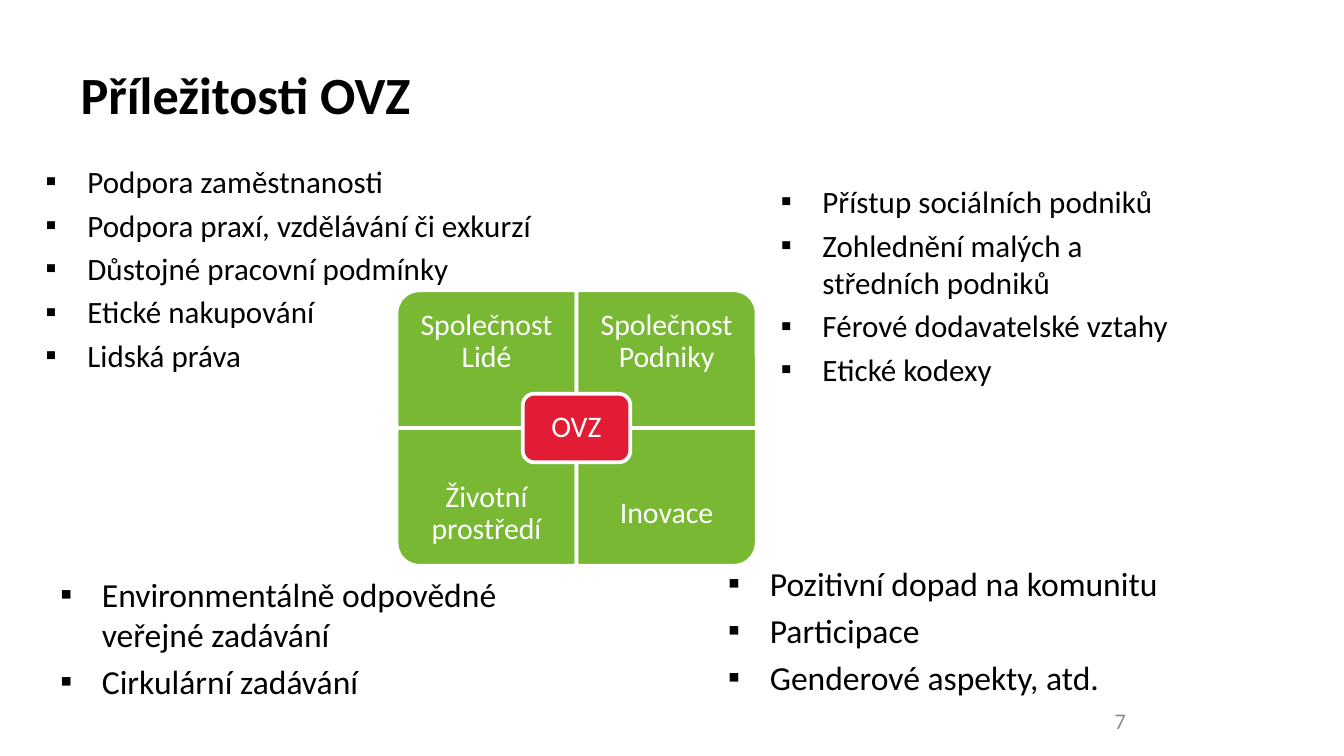
from dataclasses import dataclass
from typing import NamedTuple

from lxml.etree import SubElement
from pptx import Presentation
from pptx.dml.color import RGBColor
from pptx.enum.shapes import MSO_SHAPE as Shape
from pptx.enum.text import MSO_ANCHOR as Anchor, MSO_AUTO_SIZE as AutoSize, PP_ALIGN as Align
from pptx.oxml.ns import qn
from pptx.util import Inches, Pt

WIDTH = 10
HEIGHT = WIDTH * 9 / 16
COLS = 100
ROWS = COLS * 9 / 16


@dataclass(frozen=True)
class Theme:
    font: str = "Calibri"
    ink: str = "000000"
    white: str = "FFFFFF"
    green: str = "79B833"
    red: str = "E21C35"
    grey: str = "8C8C8C"
    title: float = 28
    upper: float = 16.65
    lower: float = 18
    label: float = 16
    number: float = 12
    line: float = 2
    indent: float = 0.31


class Box(NamedTuple):
    col: float
    row: float
    cols: float
    rows: float

    def emu(self) -> tuple:
        x, y = WIDTH / COLS, HEIGHT / ROWS
        return (Inches(self.col * x), Inches(self.row * y),
                Inches(self.cols * x), Inches(self.rows * y))


class BulletList(NamedTuple):
    box: Box
    size: float
    items: list[str]


class Quadrant(NamedTuple):
    text: str
    col: int
    row: int
    rotation: int


T = Theme()
QUAD = Box(29.5, 21.6, 13.4, 10.25)
LABEL_ROWS = QUAD.rows * 0.75
HUB = Box(38.9, 29.3, 8, 5.1)

UPPER_LISTS = [
    BulletList(Box(2.4, 11.6, 42.2, 21.3), T.upper, [
        "Podpora zaměstnanosti", "Podpora praxí, vzdělávání či exkurzí",
        "Důstojné pracovní podmínky", "Etické nakupování", "Lidská práva"]),
    BulletList(Box(57.1, 13.1, 31.5, 20.5), T.upper, [
        "Přístup sociálních podniků", "Zohlednění malých a středních podniků",
        "Férové dodavatelské vztahy", "Etické kodexy"]),
]
LOWER_LISTS = [
    BulletList(Box(3.5, 42.2, 41.1, 13.7), T.lower, [
        "Environmentálně odpovědné veřejné zadávání", "Cirkulární zadávání"]),
    BulletList(Box(53.2, 41.4, 37, 13.7), T.lower, [
        "Pozitivní dopad na komunitu", "Participace", "Genderové aspekty, atd."]),
]
QUADRANTS = [
    Quadrant("Společnost Lidé", 0, 0, 270),
    Quadrant("Společnost Podniky", 1, 0, 0),
    Quadrant("Životní prostředí", 0, 1, 180),
    Quadrant("Inovace", 1, 1, 90),
]


def place(sp, box: Box) -> None:
    sp.left, sp.top, sp.width, sp.height = box.emu()


def add_bullet(p) -> None:
    pPr = p._p.get_or_add_pPr()
    pPr.set("marL", str(Inches(T.indent)))
    pPr.set("indent", str(-Inches(T.indent)))
    SubElement(pPr, qn("a:buFont")).set("typeface", T.font)
    SubElement(pPr, qn("a:buChar")).set("char", "▪")


def write(sp, *texts: str, size: float, color: str = T.ink, bold: bool = False,
          align: Align = Align.LEFT, anchor: Anchor = Anchor.TOP, bullet: bool = False,
          inset: float | None = None, spacing: float = 1) -> None:
    tf = sp.text_frame
    tf.word_wrap, tf.auto_size, tf.vertical_anchor = True, AutoSize.NONE, anchor
    if inset is not None:
        tf.margin_left = tf.margin_top = tf.margin_right = tf.margin_bottom = Inches(inset)
    for i, text in enumerate(texts):
        p = tf.add_paragraph() if i else tf.paragraphs[0]
        if bullet:
            add_bullet(p)
        p.alignment, p.line_spacing = align, spacing
        p.space_before = Pt(size * 0.2 if i else 0)
        r = p.add_run()
        r.text = text
        r.font.name, r.font.size, r.font.bold = T.font, Pt(size), bold
        r.font.color.rgb = RGBColor.from_string(color)


def add_list(sp, content: BulletList) -> None:
    write(sp, *content.items, size=content.size, bullet=True)


def add_tile(shapes, kind: Shape, box: Box, fill: str):
    sp = shapes.add_shape(kind, *box.emu())
    sp.shadow.inherit = False
    sp.fill.solid()
    sp.fill.fore_color.rgb = RGBColor.from_string(fill)
    sp.line.color.rgb = RGBColor.from_string(T.white)
    sp.line.width = Pt(T.line)
    return sp


def add_quadrant(shapes, q: Quadrant) -> None:
    x, y = QUAD.col + q.col * QUAD.cols, QUAD.row + q.row * QUAD.rows
    w, h = QUAD.cols, QUAD.rows
    if q.rotation % 180:
        box = Box(x + (w - h) / 2, y + (h - w) / 2, h, w)
    else:
        box = Box(x, y, w, h)
    add_tile(shapes, Shape.ROUND_1_RECTANGLE, box, T.green).rotation = q.rotation
    label = Box(x, y + q.row * (h - LABEL_ROWS), w, LABEL_ROWS)
    write(shapes.add_textbox(*label.emu()), q.text, size=T.label, color=T.white,
          align=Align.CENTER, anchor=Anchor.MIDDLE, inset=0.12, spacing=0.9)


def main() -> None:
    prs = Presentation()
    prs.slide_width, prs.slide_height = Inches(WIDTH), Inches(HEIGHT)
    s = prs.slides.add_slide(prs.slide_layouts[3])

    title = s.shapes.title
    place(title, Box(5, 2.3, 80.4, 9.4))
    write(title, "Příležitosti OVZ", size=T.title, bold=True, anchor=Anchor.MIDDLE)

    for idx, content in enumerate(UPPER_LISTS, 1):
        sp = s.placeholders[idx]
        place(sp, content.box)
        add_list(sp, content)

    number = s.shapes.add_textbox(*Box(71.7, 52.1, 23.3, 3).emu())
    write(number, "7", size=T.number, color=T.grey, align=Align.CENTER, anchor=Anchor.MIDDLE)

    matrix = s.shapes.add_group_shape().shapes
    for q in QUADRANTS:
        add_quadrant(matrix, q)
    hub = add_tile(matrix, Shape.ROUNDED_RECTANGLE, HUB, T.red)
    write(hub, "OVZ", size=T.label, color=T.white, align=Align.CENTER,
          anchor=Anchor.MIDDLE, inset=0.07, spacing=0.9)

    for content in LOWER_LISTS:
        add_list(s.shapes.add_textbox(*content.box.emu()), content)

    prs.save("out.pptx")


if __name__ == "__main__":
    main()
